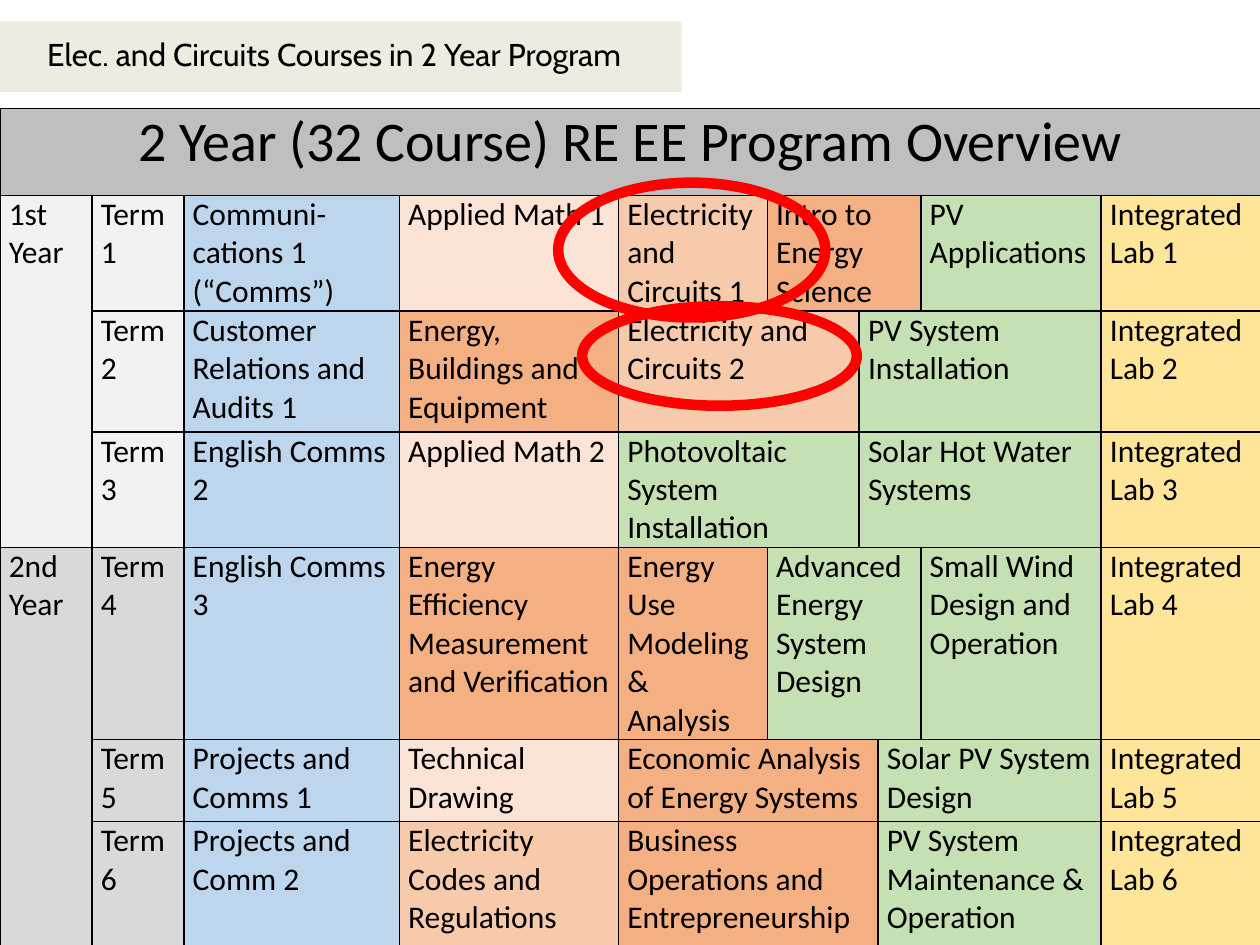
from dataclasses import dataclass

from lxml import etree
from pptx import Presentation
from pptx import util as u
from pptx.dml.color import RGBColor
from pptx.enum import shapes, text
from pptx.oxml import ns


@dataclass(frozen=True)
class Theme:
    ink: str = "000000"
    bar: str = "EEECE1"
    mark: str = "FF0000"
    heading: str = "BFBFBF"
    first_year: str = "F2F2F2"
    second_year: str = "D9D9D9"
    comms: str = "BDD6EE"
    maths: str = "FBE4D5"
    electrical: str = "F7CAAC"
    energy: str = "F4B083"
    solar: str = "C5E0B3"
    lab: str = "FFE599"
    title_font: str = "Cabin"
    table_font: str = "Calibri"
    body_size: int = 18
    heading_size: int = 32
    border: int = 1
    ring: int = 6


THEME = Theme()
COLUMNS = [0.73, 0.73, 1.71, 1.74, 1.18, 0.73, 0.15, 0.34, 1.43, 1.27]
ROWS = [0.69, 0.92, 0.96, 0.64, 1.3, 0.65, 1.01]
YEARS = [("1st Year", THEME.first_year), ("2nd Year", THEME.second_year)]
TERMS_PER_YEAR = 3

TERMS = [
    [("Communi- cations 1 (“Comms”)", "comms", 1), ("Applied Math 1", "maths", 1),
     ("Electricity and Circuits 1", "electrical", 1),
     ("Intro to Energy Science", "energy", 3), ("PV Applications", "solar", 1)],
    [("Customer Relations and Audits 1", "comms", 1),
     ("Energy, Buildings and Equipment", "energy", 1),
     ("Electricity and Circuits 2", "electrical", 2),
     ("PV System Installation", "solar", 3)],
    [("English Comms 2", "comms", 1), ("Applied Math 2", "maths", 1),
     ("Photovoltaic System Installation", "solar", 2),
     ("Solar Hot Water Systems", "solar", 3)],
    [("English Comms 3", "comms", 1),
     ("Energy Efficiency Measurement and Verification", "energy", 1),
     ("Energy Use Modeling & Analysis", "energy", 1),
     ("Advanced Energy System Design", "solar", 3),
     ("Small Wind Design and Operation", "solar", 1)],
    [("Projects and Comms 1", "comms", 1), ("Technical Drawing", "maths", 1),
     ("Economic Analysis of Energy Systems", "energy", 3),
     ("Solar PV System Design", "solar", 2)],
    [("Projects and Comm 2", "comms", 1),
     ("Electricity Codes and Regulations", "electrical", 1),
     ("Business Operations and Entrepreneurship", "energy", 3),
     ("PV System Maintenance & Operation", "solar", 2)],
]


def rgb(colour):
    return RGBColor.from_string(colour)


def write(frame, wording, font, size, align):
    para = frame.paragraphs[0]
    para.alignment = align
    span = para.add_run()
    span.text = wording
    span.font.name = font
    span.font.size = u.Pt(size)
    span.font.color.rgb = rgb(THEME.ink)


def add_outline(page, kind, left, top, width, height):
    shape = page.shapes.add_shape(kind, *map(u.Inches, (left, top, width, height)))
    shape.shadow.inherit = False
    return shape


def add_title(page, wording):
    bar = add_outline(page, shapes.MSO_SHAPE.RECTANGLE, 0, 0.17, 5.41, 0.56)
    bar.fill.solid()
    bar.fill.fore_color.rgb = rgb(THEME.bar)
    bar.line.fill.background()

    title = page.shapes.title
    title.left, title.top, title.width, title.height = map(
        u.Inches, (0.1, 0.06, 5.16, 0.74))
    frame = title.text_frame
    frame.word_wrap = True
    frame.auto_size = text.MSO_AUTO_SIZE.NONE
    frame.vertical_anchor = text.MSO_ANCHOR.MIDDLE
    write(frame, wording, THEME.title_font, THEME.body_size, text.PP_ALIGN.CENTER)
    bar.element.addnext(title.element)


def add_ring(page, left, top, width, height):
    ring = add_outline(page, shapes.MSO_SHAPE.OVAL, left, top, width, height)
    ring.fill.background()
    ring.line.color.rgb = rgb(THEME.mark)
    ring.line.width = u.Pt(THEME.ring)


def draw_borders(cell):
    properties = cell._tc.get_or_add_tcPr()
    for side in ("lnL", "lnR", "lnT", "lnB"):
        line = etree.SubElement(properties, ns.qn(f"a:{side}"),
                                w=str(u.Pt(THEME.border)))
        fill = etree.SubElement(line, ns.qn("a:solidFill"))
        etree.SubElement(fill, ns.qn("a:srgbClr"), val=THEME.ink)


def fill_cell(table, row, column, wording, colour, rows=1, columns=1,
              size=THEME.body_size, align=text.PP_ALIGN.LEFT):
    cell = table.cell(row, column)
    if rows * columns > 1:
        cell.merge(table.cell(row + rows - 1, column + columns - 1))
    cell.margin_left = cell.margin_right = u.Inches(0.07)
    cell.margin_top = cell.margin_bottom = 0
    cell.fill.solid()
    cell.fill.fore_color.rgb = rgb(colour)
    write(cell.text_frame, wording, THEME.table_font, size, align)


def add_grid(page):
    holder = page.shapes.add_table(len(ROWS), len(COLUMNS), 0, u.Inches(0.86),
                                   u.Inches(10), u.Inches(6.64))
    table = holder.table
    table.first_row = table.horz_banding = False
    for column, width in zip(table.columns, COLUMNS):
        column.width = u.Inches(width)
    for row, height in zip(table.rows, ROWS):
        row.height = u.Inches(height)
    for cell in table.iter_cells():
        draw_borders(cell)
    return table


def add_program(page):
    table = add_grid(page)
    fill_cell(table, 0, 0, "2 Year (32 Course) RE EE Program Overview", THEME.heading,
              columns=len(COLUMNS), size=THEME.heading_size,
              align=text.PP_ALIGN.CENTER)
    for term, courses in enumerate(TERMS, start=1):
        year, position = divmod(term - 1, TERMS_PER_YEAR)
        label, shade = YEARS[year]
        if position == 0:
            fill_cell(table, term, 0, label, shade, rows=TERMS_PER_YEAR)
        fill_cell(table, term, 1, f"Term {term}", shade)
        column = 2
        for course, subject, columns in courses:
            fill_cell(table, term, column, course, getattr(THEME, subject),
                      columns=columns)
            column += columns
        fill_cell(table, term, column, f"Integrated Lab {term}", THEME.lab)


def main():
    deck = Presentation()
    deck.slide_width, deck.slide_height = u.Inches(10), u.Inches(7.5)
    page = deck.slides.add_slide(deck.slide_layouts.get_by_name("Title Only"))
    add_title(page, "Elec. and Circuits Courses in 2 Year Program ")
    add_program(page)
    add_ring(page, 4.43, 1.45, 2.12, 1.07)
    add_ring(page, 4.62, 2.43, 2.18, 0.79)
    deck.save("out.pptx")


if __name__ == "__main__":
    main()
